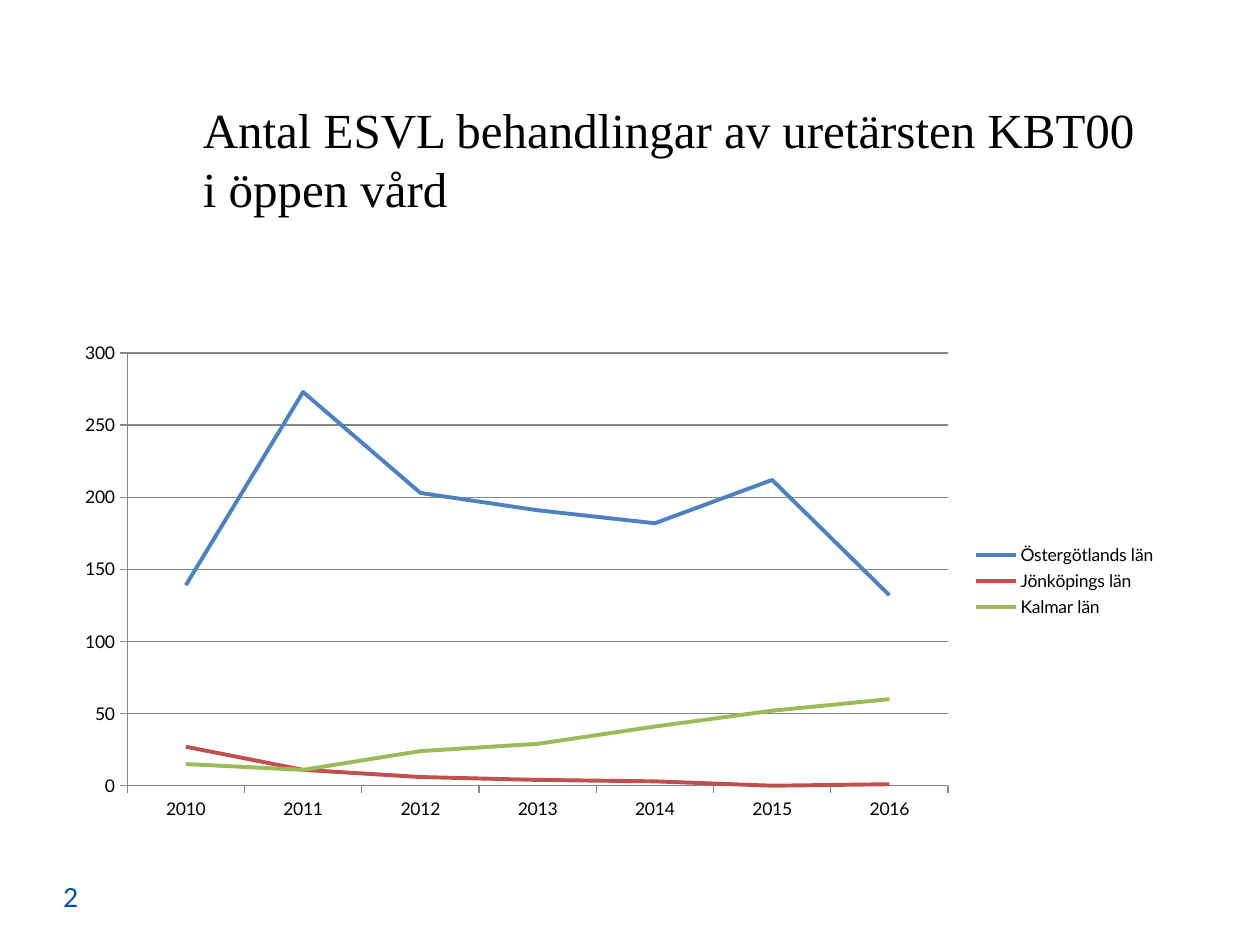
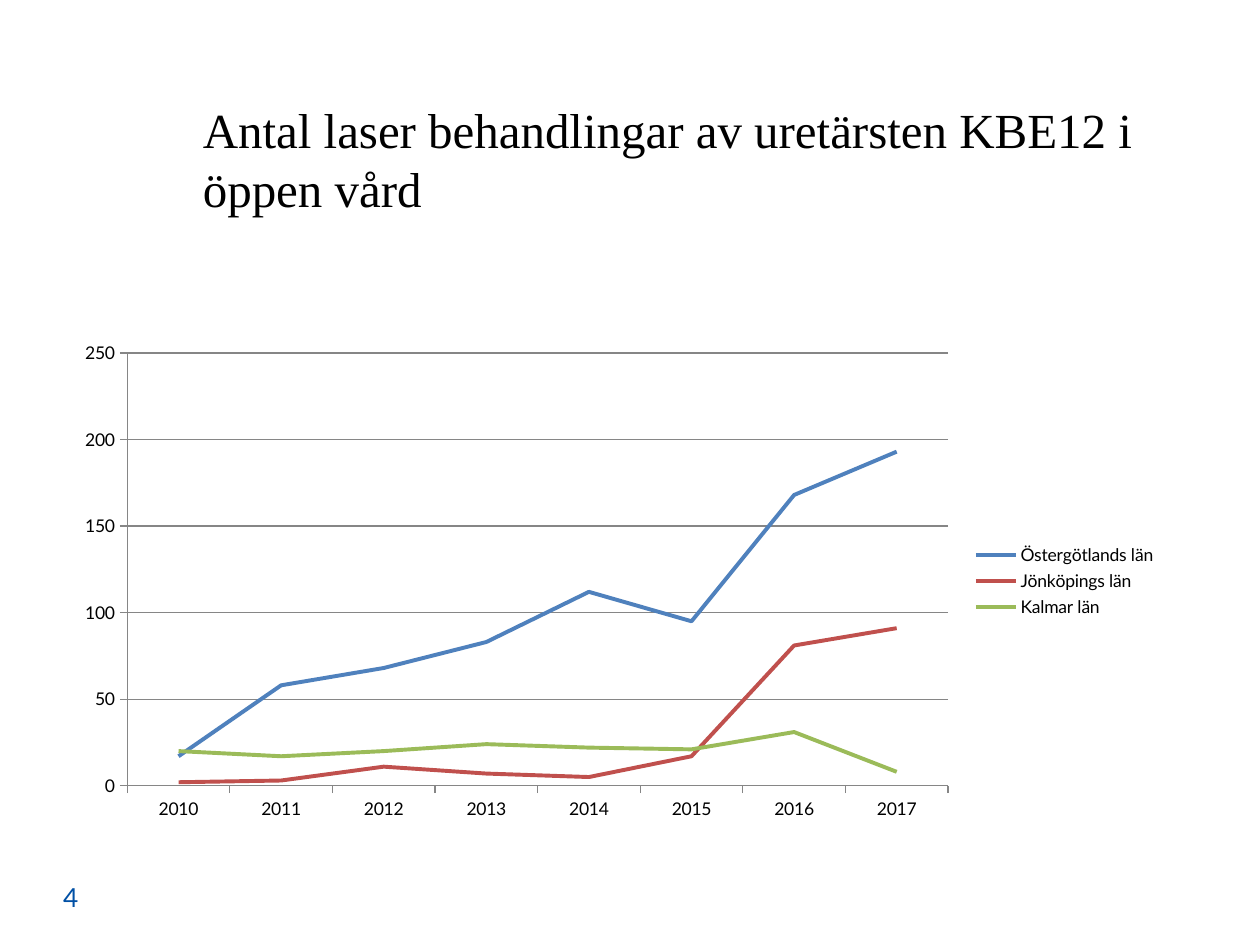
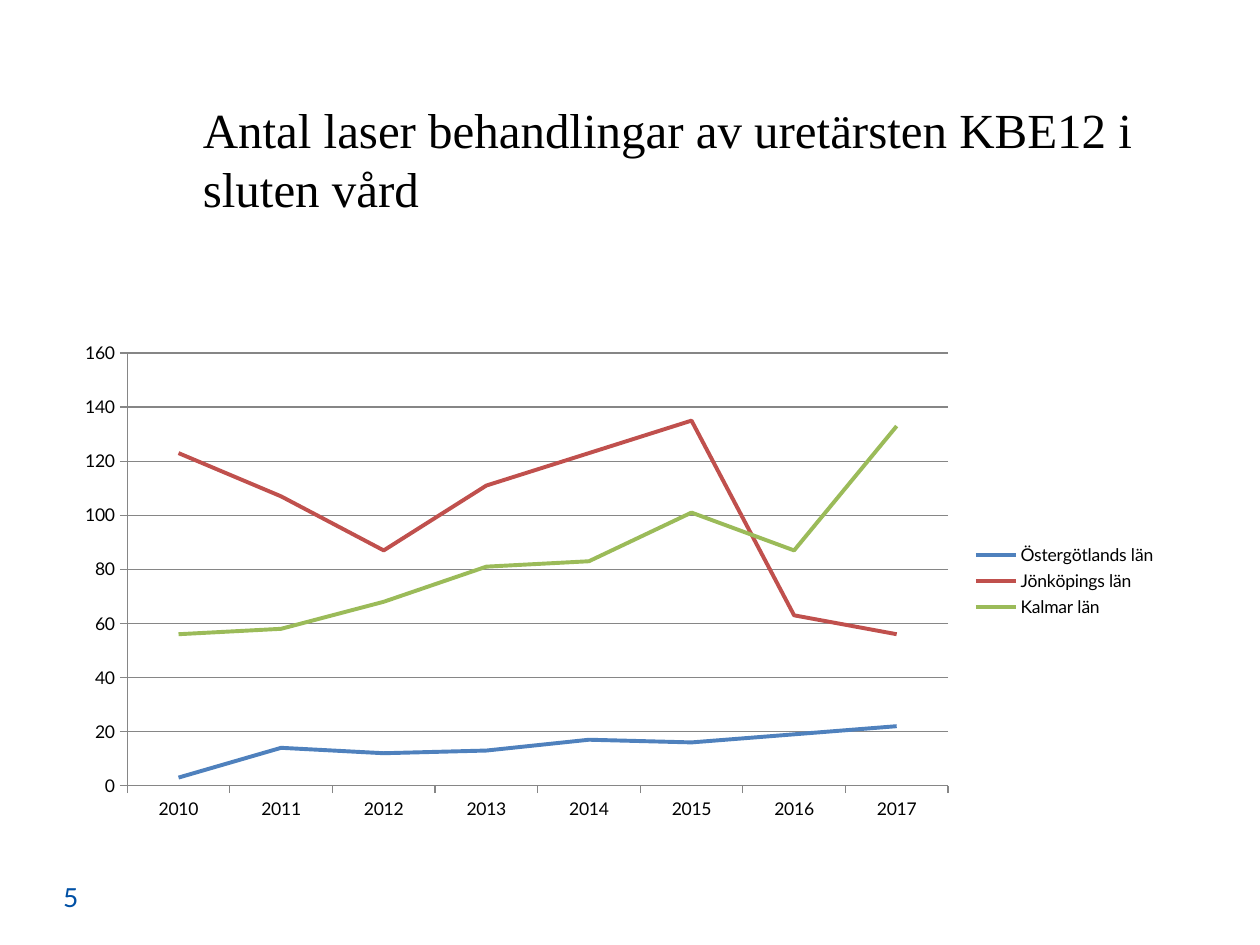
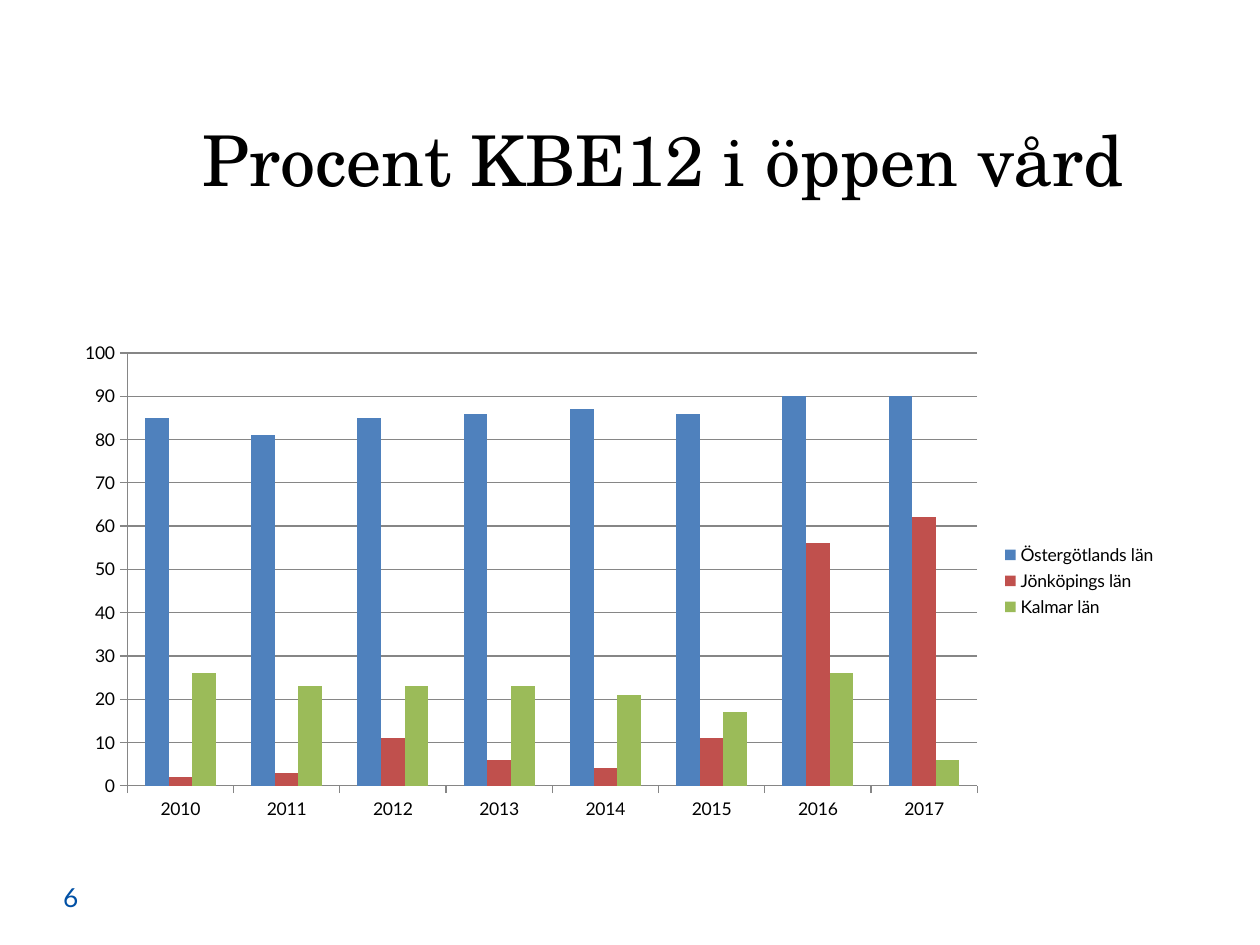
from pptx import Presentation
from pptx.chart.data import CategoryChartData
from pptx.dml.color import RGBColor
from pptx.enum import chart as charts, text
from pptx.util import Inches, Pt

BLACK = RGBColor(0x00, 0x00, 0x00)
NUMBER_BLUE = RGBColor(0x00, 0x50, 0xA5)
GRID_GRAY = RGBColor(0x86, 0x86, 0x86)
COUNTY_COLORS = {
    "Östergötlands län": RGBColor(0x4F, 0x81, 0xBD),
    "Jönköpings län": RGBColor(0xC0, 0x50, 0x4D),
    "Kalmar län": RGBColor(0x9B, 0xBB, 0x59),
}

BODY_FONT = "Lato"
TITLE_FONT = "Times New Roman"
FIRST_YEAR = 2010
TITLE_ONLY_LAYOUT = 5


def format_font(font, name, size, color):
    font.name = name
    font.size = Pt(size)
    font.color.rgb = color


def place(shape, left, top, width, height):
    shape.left, shape.top = Inches(left), Inches(top)
    shape.width, shape.height = Inches(width), Inches(height)


def set_text(shape, wording, anchor, alignment, font_name, size, color):
    frame = shape.text_frame
    frame.text = wording
    frame.word_wrap = True
    frame.auto_size = text.MSO_AUTO_SIZE.NONE
    frame.vertical_anchor = anchor
    paragraph = frame.paragraphs[0]
    paragraph.alignment = alignment
    format_font(paragraph.runs[0].font, font_name, size, color)


def add_titled_slide(presentation, title, number, font_name=TITLE_FONT, size=28):
    """Add a slide with its title and its slide number."""
    slide = presentation.slides.add_slide(presentation.slide_layouts[TITLE_ONLY_LAYOUT])
    place(slide.shapes.title, 1.51, 0.57, 7.76, 1.38)
    set_text(slide.shapes.title, title, text.MSO_ANCHOR.MIDDLE,
             text.PP_ALIGN.LEFT, font_name, size, BLACK)
    number_box = slide.shapes.add_textbox(
        Inches(0.17), Inches(6.89), Inches(0.55), Inches(0.4))
    set_text(number_box, str(number), text.MSO_ANCHOR.BOTTOM,
             text.PP_ALIGN.RIGHT, BODY_FONT, 15, NUMBER_BLUE)
    return slide


def format_line(line, color, width):
    line.color.rgb = color
    line.width = Pt(width)


def format_axes(chart, maximum, step, number_format):
    value_axis = chart.value_axis
    value_axis.minimum_scale = 0
    value_axis.maximum_scale = maximum
    value_axis.major_unit = step
    value_axis.has_major_gridlines = True
    format_line(value_axis.major_gridlines.format.line, GRID_GRAY, 0.75)
    value_axis.tick_labels.number_format = number_format
    value_axis.tick_labels.number_format_is_linked = False
    for axis in (chart.category_axis, value_axis):
        axis.major_tick_mark = charts.XL_TICK_MARK.OUTSIDE
        axis.minor_tick_mark = charts.XL_TICK_MARK.NONE
        format_line(axis.format.line, GRID_GRAY, 0.75)


def add_county_chart(slide, chart_type, county_values, maximum, step, number_format="#,##0"):
    """Add a chart of yearly values, one series for each county."""
    data = CategoryChartData()
    data.categories = [str(FIRST_YEAR + i) for i in range(len(county_values[0]))]
    for county, values in zip(COUNTY_COLORS, county_values):
        data.add_series(county, values)
    chart = slide.shapes.add_chart(
        chart_type, Inches(0.5), Inches(2.64), Inches(8.78), Inches(3.94), data).chart
    chart.has_title = False
    format_font(chart.font, BODY_FONT, 10, BLACK)
    chart.has_legend = True
    chart.legend.position = charts.XL_LEGEND_POSITION.RIGHT
    chart.legend.include_in_layout = False
    format_axes(chart, maximum, step, number_format)
    chart.plots[0].vary_by_categories = False
    return chart


def add_line_chart(slide, county_values, maximum, step):
    chart = add_county_chart(slide, charts.XL_CHART_TYPE.LINE, county_values, maximum, step)
    for series, color in zip(chart.plots[0].series, COUNTY_COLORS.values()):
        series.smooth = False
        series.marker.style = charts.XL_MARKER_STYLE.NONE
        format_line(series.format.line, color, 2.25)


def add_column_chart(slide, county_values, maximum, step):
    chart = add_county_chart(slide, charts.XL_CHART_TYPE.COLUMN_CLUSTERED,
                             county_values, maximum, step, "0")
    plot = chart.plots[0]
    plot.gap_width = 150
    plot.overlap = 0
    for series, color in zip(plot.series, COUNTY_COLORS.values()):
        series.format.fill.solid()
        series.format.fill.fore_color.rgb = color


def main():
    presentation = Presentation()
    presentation.slide_width = Inches(10)
    presentation.slide_height = Inches(7.5)

    slide = add_titled_slide(
        presentation, "Antal ESVL behandlingar av uretärsten KBT00 i öppen vård", 2)
    add_line_chart(slide, [
        (139, 273, 203, 191, 182, 212, 132),
        (27, 11, 6, 4, 3, 0, 1),
        (15, 11, 24, 29, 41, 52, 60),
    ], maximum=300, step=50)

    slide = add_titled_slide(
        presentation, "Antal laser behandlingar av uretärsten KBE12 i öppen vård", 4)
    add_line_chart(slide, [
        (17, 58, 68, 83, 112, 95, 168, 193),
        (2, 3, 11, 7, 5, 17, 81, 91),
        (20, 17, 20, 24, 22, 21, 31, 8),
    ], maximum=250, step=50)

    slide = add_titled_slide(
        presentation, "Antal laser behandlingar av uretärsten KBE12 i sluten vård", 5)
    add_line_chart(slide, [
        (3, 14, 12, 13, 17, 16, 19, 22),
        (123, 107, 87, 111, 123, 135, 63, 56),
        (56, 58, 68, 81, 83, 101, 87, 133),
    ], maximum=160, step=20)

    slide = add_titled_slide(
        presentation, "Procent KBE12 i öppen vård", 6, "TeX Gyre Schola", 40)
    add_column_chart(slide, [
        (85, 81, 85, 86, 87, 86, 90, 90),
        (2, 3, 11, 6, 4, 11, 56, 62),
        (26, 23, 23, 23, 21, 17, 26, 6),
    ], maximum=100, step=10)

    presentation.save("out.pptx")


if __name__ == "__main__":
    main()
